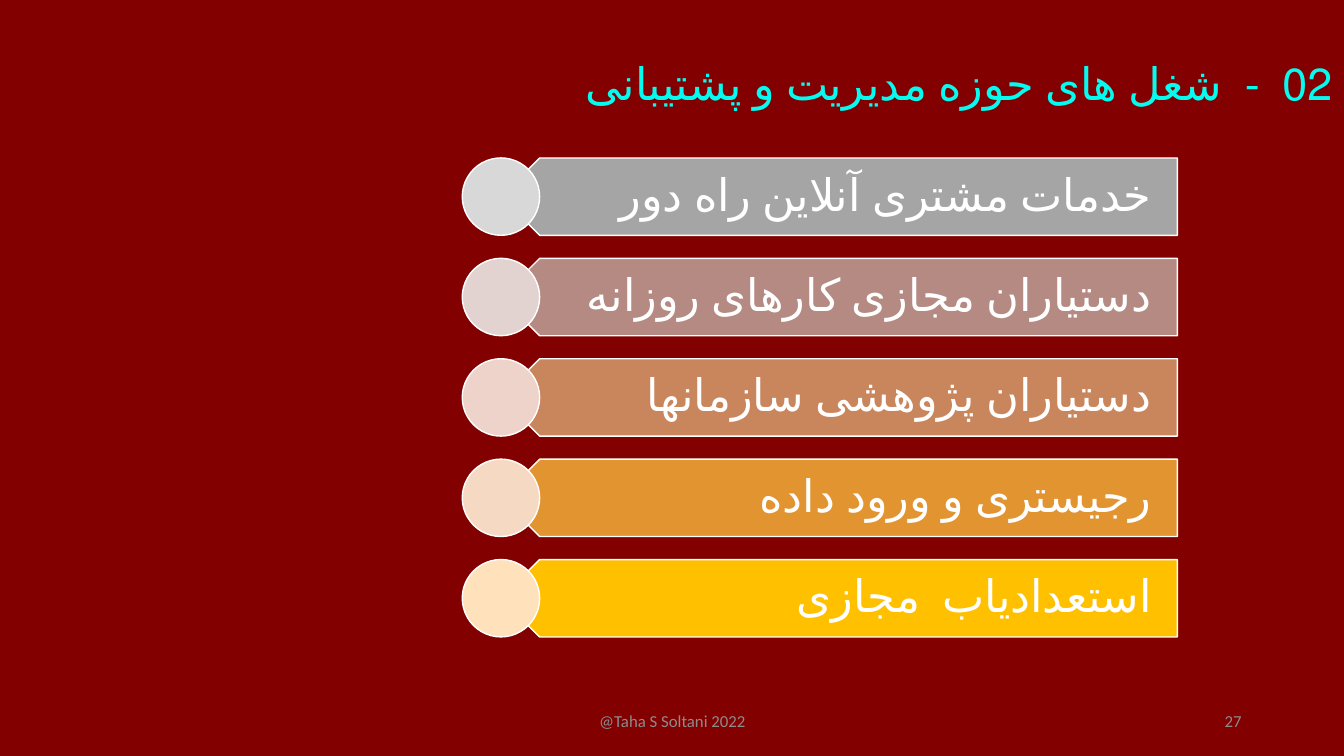
from pptx import Presentation
from pptx.dml.color import RGBColor
from pptx.enum.lang import MSO_LANGUAGE_ID as Language
from pptx.enum.shapes import MSO_SHAPE as Shape
from pptx.enum.text import MSO_ANCHOR as Anchor, MSO_AUTO_SIZE as AutoSize, PP_ALIGN as Align
from pptx.util import Cm, Pt

MAROON = RGBColor(0x82, 0x00, 0x00)
CYAN = RGBColor(0x04, 0xFC, 0xF0)
WHITE = RGBColor(0xFF, 0xFF, 0xFF)
GREY = RGBColor(0x8C, 0x8C, 0x8C)

# Job title, bar colour, circle colour
JOBS = [
    ("خدمات مشتری آنلاین راه دور", RGBColor(0xA5, 0xA5, 0xA5), RGBColor(0xD8, 0xD8, 0xD8)),
    ("دستیاران مجازی کارهای روزانه", RGBColor(0xB4, 0x8A, 0x83), RGBColor(0xE3, 0xD3, 0xD0)),
    ("دستیاران پژوهشی سازمانها", RGBColor(0xC9, 0x85, 0x5C), RGBColor(0xED, 0xD3, 0xC9)),
    ("رجیستری و ورود داده", RGBColor(0xE1, 0x94, 0x30), RGBColor(0xF6, 0xD9, 0xC2)),
    ("استعدادیاب  مجازی", RGBColor(0xFF, 0xC0, 0x00), RGBColor(0xFF, 0xE1, 0xBB)),
]


def write(frame, text, size, color, align, rtl=False):
    frame.word_wrap = True
    frame.auto_size = AutoSize.NONE
    paragraph = frame.paragraphs[0]
    paragraph.text = text
    paragraph.alignment = align
    font = paragraph.runs[0].font
    font.name = "Calibri"
    font.size = Pt(size)
    font.color.rgb = color
    if rtl:
        paragraph.line_spacing = 0.9
        paragraph._p.get_or_add_pPr().set("rtl", "1")
        font.language_id = Language.FARSI


def add_block(slide, kind, left, top, width, height, fill):
    block = slide.shapes.add_shape(kind, left, top, width, height)
    block.shadow.inherit = False
    block.fill.solid()
    block.fill.fore_color.rgb = fill
    block.line.color.rgb = WHITE
    block.line.width = Pt(1)
    return block


def add_heading(slide, left, top, width, height):
    heading = slide.shapes.title
    heading.left, heading.top, heading.width, heading.height = left, top, width, height
    heading.text_frame.vertical_anchor = Anchor.TOP
    write(heading.text_frame, "02  -  شغل های حوزه مدیریت و پشتیبانی", 32, CYAN, Align.RIGHT, rtl=True)


def add_footer(slide, text, align, left, top, width, height):
    frame = slide.shapes.add_textbox(left, top, width, height).text_frame
    frame.vertical_anchor = Anchor.MIDDLE
    write(frame, text, 12, GREY, align)


def add_job_row(slide, job, bar_color, circle_color, left, top, width, height):
    # Bar pointing left, starting at the centre of the circle
    bar_left = left + height // 2
    bar = add_block(slide, Shape.PENTAGON, bar_left, top, width - height // 2, height, bar_color)
    bar.rotation = 180
    # Label, upright over the bar
    label_left = left + height * 3 // 4
    label = slide.shapes.add_textbox(label_left, top, left + width - label_left, height).text_frame
    label.vertical_anchor = Anchor.MIDDLE
    label.margin_left, label.margin_right = Cm(0.86), Cm(0.64)
    label.margin_top = label.margin_bottom = Cm(0.33)
    write(label, job, 32, WHITE, Align.RIGHT, rtl=True)
    # Circle over the tip
    add_block(slide, Shape.OVAL, left, top, height, height, circle_color)


def add_job_list(slide, left, top, width, height):
    row_height = Cm(1.95)
    pitch = (height - row_height) // (len(JOBS) - 1)
    for index, (job, bar_color, circle_color) in enumerate(JOBS):
        add_job_row(slide, job, bar_color, circle_color, left, top + index * pitch, width, row_height)


def main():
    deck = Presentation()
    deck.slide_width, deck.slide_height = Cm(33.87), Cm(19.05)
    slide = deck.slides.add_slide(deck.slide_layouts[5])
    slide.background.fill.solid()
    slide.background.fill.fore_color.rgb = MAROON

    add_heading(slide, Cm(11.23), Cm(1.42), Cm(22.6), Cm(3.56))
    add_footer(slide, "@Taha S Soltani 2022", Align.CENTER, Cm(11.23), Cm(17.66), Cm(11.43), Cm(1.01))
    add_footer(slide, "27", Align.RIGHT, Cm(23.92), Cm(17.66), Cm(7.62), Cm(1.01))
    add_job_list(slide, Cm(11.65), Cm(3.98), Cm(18.02), Cm(12.07))

    deck.save("out.pptx")


if __name__ == "__main__":
    main()
